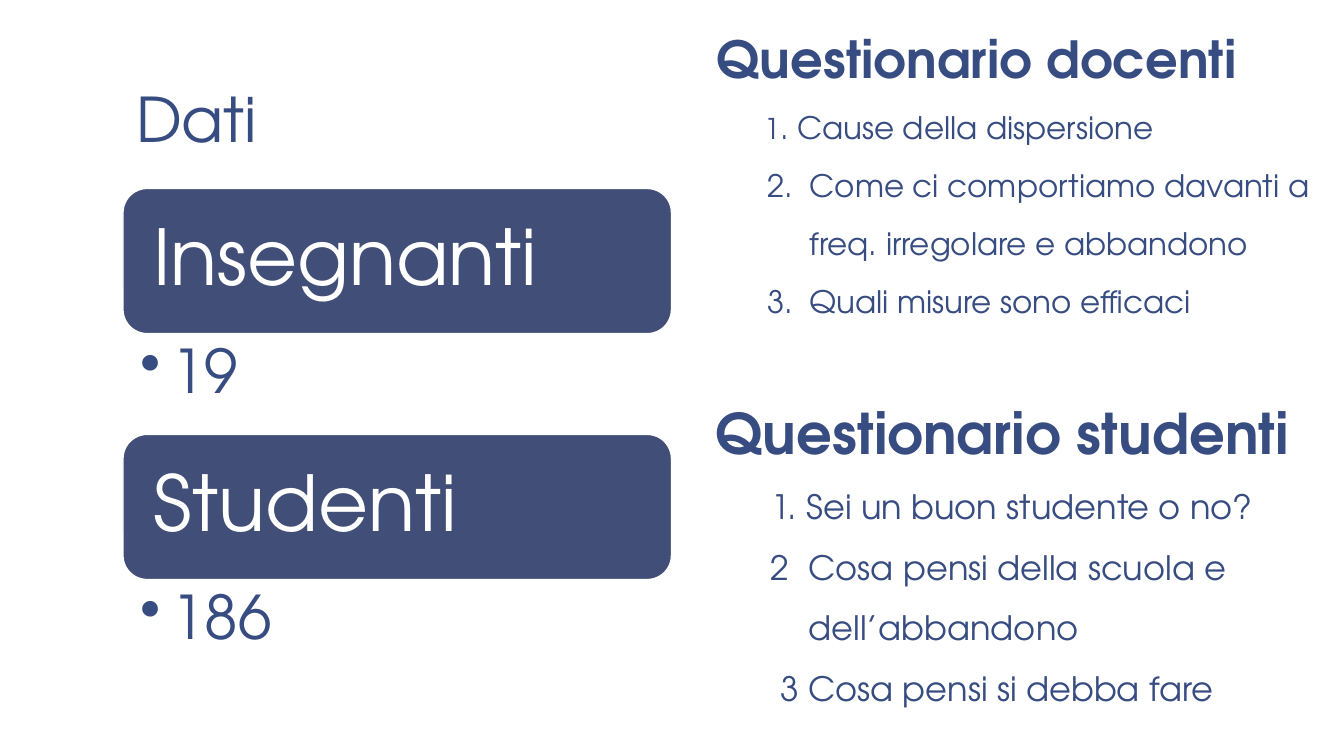
from lxml import etree
from pptx import Presentation
from pptx.dml.color import RGBColor
from pptx.enum.shapes import MSO_SHAPE
from pptx.enum.text import MSO_ANCHOR, PP_ALIGN
from pptx.oxml.ns import qn
from pptx.util import Inches, Pt

ROUNDED = MSO_SHAPE.ROUNDED_RECTANGLE
TOP, MIDDLE, BOTTOM = MSO_ANCHOR.TOP, MSO_ANCHOR.MIDDLE, MSO_ANCHOR.BOTTOM
LEFT = PP_ALIGN.LEFT

# Content
FONT, BLUE, PANEL, WHITE = "TeX Gyre Adventor", "374C81", "414E77", "FFFFFF"
TITLE = "Dati"
GROUPS = [("Insegnanti", "19"), ("Studenti", "186")]
# Each question line: text start, first-line offset, runs of (text, size)
QUESTIONNAIRES = [
    {"at": (6.98, 0.29), "heading": ("Questionario docenti", 36.5), "lines": [
        (0.47, 0, [("1", 20.4), (". Cause della dispersione", 22.1)]),
        (0.92, -0.42, [("2.\tCome ci comportiamo davanti a", 22.1)]),
        (0.92, 0, [("freq. irregolare e abbandono", 22.1)]),
        (0.92, -0.42, [("3.\tQuali misure sono efficaci", 22.1)]),
    ]},
    {"at": (6.97, 3.99), "heading": ("Questionario studenti", 40), "lines": [
        (0.55, 0, [("1. Sei un buon studente o no?", 24)]),
        (0.92, -0.38, [("2\tCosa pensi della scuola e", 24)]),
        (0.92, 0, [("dell’abbandono", 24)]),
        (0.64, 0, [("3 Cosa pensi si debba fare", 24)]),
    ]},
]


def color(value):
    return RGBColor.from_string(value)


def set_frame(shape, anchor, insets):
    frame = shape.text_frame
    frame.word_wrap = True
    frame.vertical_anchor = anchor
    (frame.margin_left, frame.margin_top,
     frame.margin_right, frame.margin_bottom) = map(Inches, insets)
    return frame


def add_box(at, anchor, insets):
    return set_frame(slide.shapes.add_textbox(*map(Inches, at)), anchor, insets)


def write(paragraph, runs, spacing, fill=BLUE, bold=False, start=0, offset=0, bullet=None):
    paragraph.alignment = LEFT
    paragraph.line_spacing = spacing
    properties = paragraph._p.get_or_add_pPr()
    properties.set("marL", str(Inches(start)))
    properties.set("indent", str(Inches(offset)))
    if bullet:
        etree.SubElement(properties, qn("a:buChar")).set("char", bullet)
    for text, size in runs:
        run = paragraph.add_run()
        run.text = text
        run.font.name = FONT
        run.font.size = Pt(size)
        run.font.bold = bold
        run.font.color.rgb = color(fill)


deck = Presentation()
deck.slide_width, deck.slide_height = Inches(13.33), Inches(7.5)
slide = deck.slides.add_slide(deck.slide_layouts[6])
BODY_INSETS = (0.13, 0.07, 0.13, 0.07)

# Title
title = add_box((1.22, 0.08, 5.44, 1.53), BOTTOM, BODY_INSETS)
write(title.paragraphs[0], [(TITLE, 44)], 0.85)

# Groups: a rounded panel with its count below
GROUP_LEFT, GROUP_TOP, GROUP_WIDTH = 1.22, 1.87, 5.44
PANEL_HEIGHT, COUNT_HEIGHT = 1.44, 1
for i, (name, count) in enumerate(GROUPS):
    top = GROUP_TOP + i * (PANEL_HEIGHT + COUNT_HEIGHT)
    panel = slide.shapes.add_shape(
        ROUNDED, *map(Inches, (GROUP_LEFT, top, GROUP_WIDTH, PANEL_HEIGHT)))
    panel.shadow.inherit = False
    panel.fill.solid()
    panel.fill.fore_color.rgb = color(PANEL)
    panel.line.color.rgb = color(WHITE)
    panel.line.width = Pt(1)
    label = set_frame(panel, MIDDLE, (0.23, 0.23, 0.23, 0.23))
    write(label.paragraphs[0], [(name, 55)], 0.9, fill=WHITE)
    total = add_box((GROUP_LEFT, top + PANEL_HEIGHT, GROUP_WIDTH, COUNT_HEIGHT),
                    TOP, (0.17, 0.08, 0.43, 0.08))
    write(total.paragraphs[0], [(count, 43)], 0.9, start=0.31, offset=-0.31, bullet="•")

# Questionnaires
for questionnaire in QUESTIONNAIRES:
    body = add_box((*questionnaire["at"], 6.35, 3.15), TOP, BODY_INSETS)
    write(body.paragraphs[0], [questionnaire["heading"]], 0.85, bold=True)
    for start, offset, runs in questionnaire["lines"]:
        question = body.add_paragraph()
        question.space_before = Pt(18.7)
        write(question, runs, 0.85, start=start, offset=offset)

deck.save("out.pptx")
